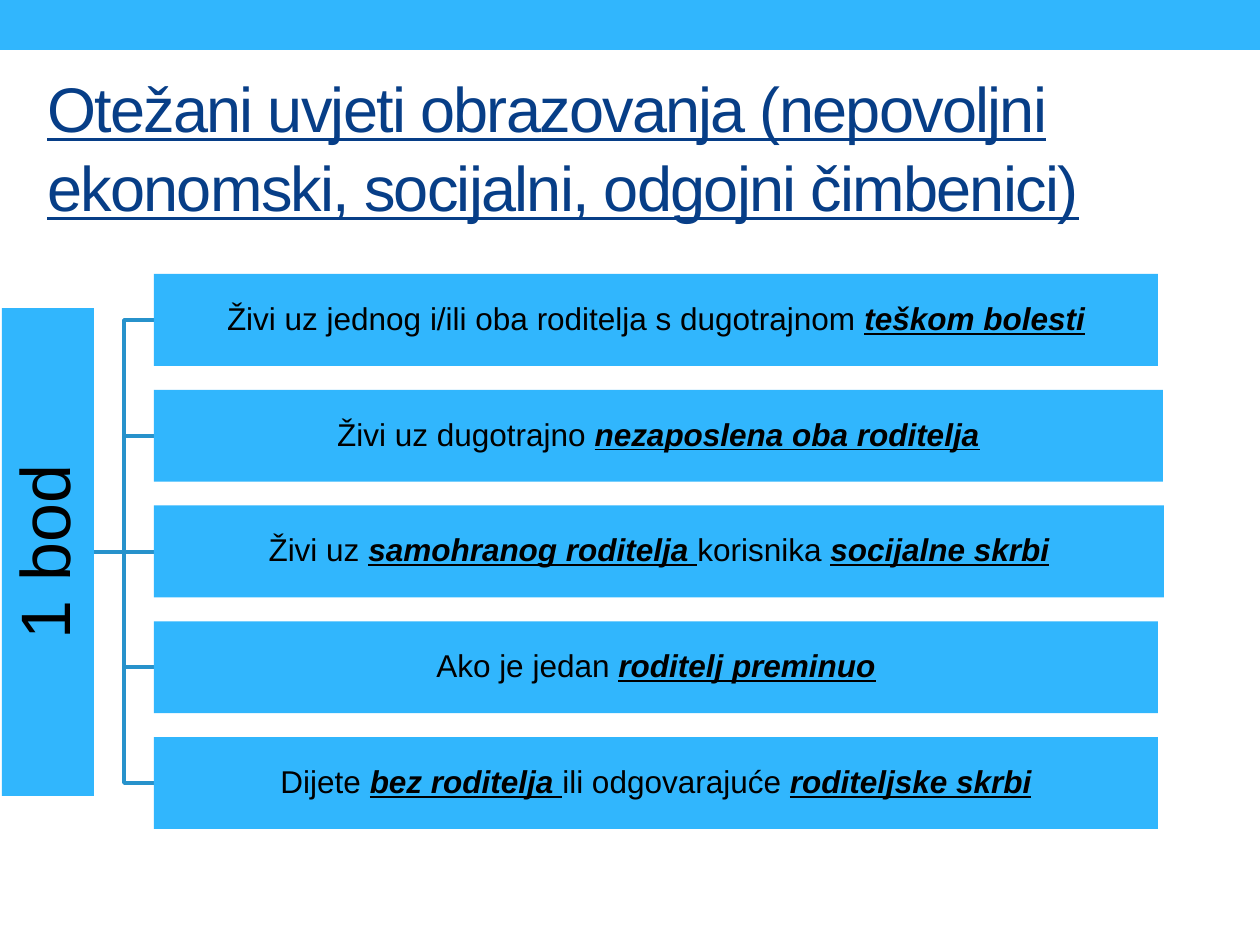
"""Build a slide listing the difficult schooling conditions worth one point."""
import lxml.etree
import pptx
import pptx.dml.color
import pptx.enum.shapes
import pptx.enum.text
import pptx.oxml.ns
import pptx.util

SCALE = 914400 / 126
BLUE, LINE_BLUE, NAVY, BLACK = "31B6FD", "2792CB", "073E87", "000000"
ROW_LEFT, ROW_TOP, ROW_HEIGHT, ROW_PITCH = 154, 274, 92, 115.75
LABEL_RIGHT, SPINE_X, CENTRE_Y = 94, 124, 552
LABEL_LENGTH, LABEL_THICKNESS = 488, 92


def px(length):
    return pptx.util.Emu(round(length * SCALE))


def color(hex_string):
    return pptx.dml.color.RGBColor.from_string(hex_string)


rows = [
    (1004, ["Živi uz jednog i/ili oba roditelja s dugotrajnom ", "teškom bolesti"]),
    (1009, ["Živi uz dugotrajno ", "nezaposlena oba roditelja"]),
    (1010, ["Živi uz ", "samohranog roditelja ", "korisnika ", "socijalne skrbi"]),
    (1004, ["Ako je jedan ", "roditelj preminuo"]),
    (1004, ["Dijete ", "bez roditelja ", "ili odgovarajuće ", "roditeljske skrbi"]),
]

presentation = pptx.Presentation()
presentation.slide_width, presentation.slide_height = px(1260), px(945)
slide = presentation.slides.add_slide(presentation.slide_layouts[6])
rectangle = pptx.enum.shapes.MSO_SHAPE.RECTANGLE

title = slide.shapes.add_textbox(px(35), px(16), px(1171), px(258))
title.text_frame.word_wrap = True
title.text_frame.vertical_anchor = pptx.enum.text.MSO_ANCHOR.MIDDLE
title.text_frame.text = "Otežani uvjeti obrazovanja (nepovoljni ekonomski, socijalni, odgojni čimbenici)"
title_paragraph = title.text_frame.paragraphs[0]
title_paragraph.line_spacing = 1.05
title_run = title_paragraph.runs[0]
title_run.font.name = "Arial"
title_run.font.size = pptx.util.Pt(36)
title_run.font.underline = True
title_run.font.color.rgb = color(NAVY)
title_run._r.get_or_add_rPr().set("spc", "-100")

for index in range(len(rows)):
    row_y = round(ROW_TOP + index * ROW_PITCH + ROW_HEIGHT / 2)
    if row_y == CENTRE_Y:
        branch = slide.shapes.add_connector(
            pptx.enum.shapes.MSO_CONNECTOR.STRAIGHT,
            px(LABEL_RIGHT), px(row_y), px(ROW_LEFT), px(row_y))
        lxml.etree.SubElement(branch._element.spPr, pptx.oxml.ns.qn("a:effectLst"))
    else:
        builder = slide.shapes.build_freeform(LABEL_RIGHT, CENTRE_Y, scale=SCALE)
        builder.add_line_segments(
            [(SPINE_X, CENTRE_Y), (SPINE_X, row_y), (ROW_LEFT, row_y)], close=False)
        branch = builder.convert_to_shape()
        branch.fill.background()
        branch.shadow.inherit = False
    branch.line.color.rgb = color(LINE_BLUE)
    branch.line.width = pptx.util.Pt(2.08)

label_left = LABEL_RIGHT - (LABEL_THICKNESS + LABEL_LENGTH) / 2
boxes = [(0, 0, 1260, 50, 0, 18, 0, []),
         (label_left, CENTRE_Y - LABEL_THICKNESS / 2, LABEL_LENGTH, LABEL_THICKNESS,
          270, 40, 4, ["1 bod"])]
for index, (width, parts) in enumerate(rows):
    boxes.append((ROW_LEFT, ROW_TOP + index * ROW_PITCH, width, ROW_HEIGHT, 0, 18, 1, parts))

for left, top, width, height, rotation, size, inset, parts in boxes:
    box = slide.shapes.add_shape(rectangle, px(left), px(top), px(width), px(height))
    box.rotation = rotation
    box.shadow.inherit = False
    box.fill.solid()
    box.fill.fore_color.rgb = color(BLUE)
    box.line.fill.background()
    frame = box.text_frame
    frame.word_wrap = True
    frame.vertical_anchor = pptx.enum.text.MSO_ANCHOR.MIDDLE
    frame.margin_left = frame.margin_right = px(inset)
    frame.margin_top = frame.margin_bottom = px(inset)
    paragraph = frame.paragraphs[0]
    paragraph.alignment = pptx.enum.text.PP_ALIGN.CENTER
    paragraph.line_spacing = 0.9
    for position, part in enumerate(parts):
        run = paragraph.add_run()
        run.text = part
        run.font.name = "Arial"
        run.font.size = pptx.util.Pt(size)
        run.font.color.rgb = color(BLACK)
        emphasised = position % 2 == 1
        run.font.bold = run.font.italic = run.font.underline = emphasised

presentation.save("out.pptx")
